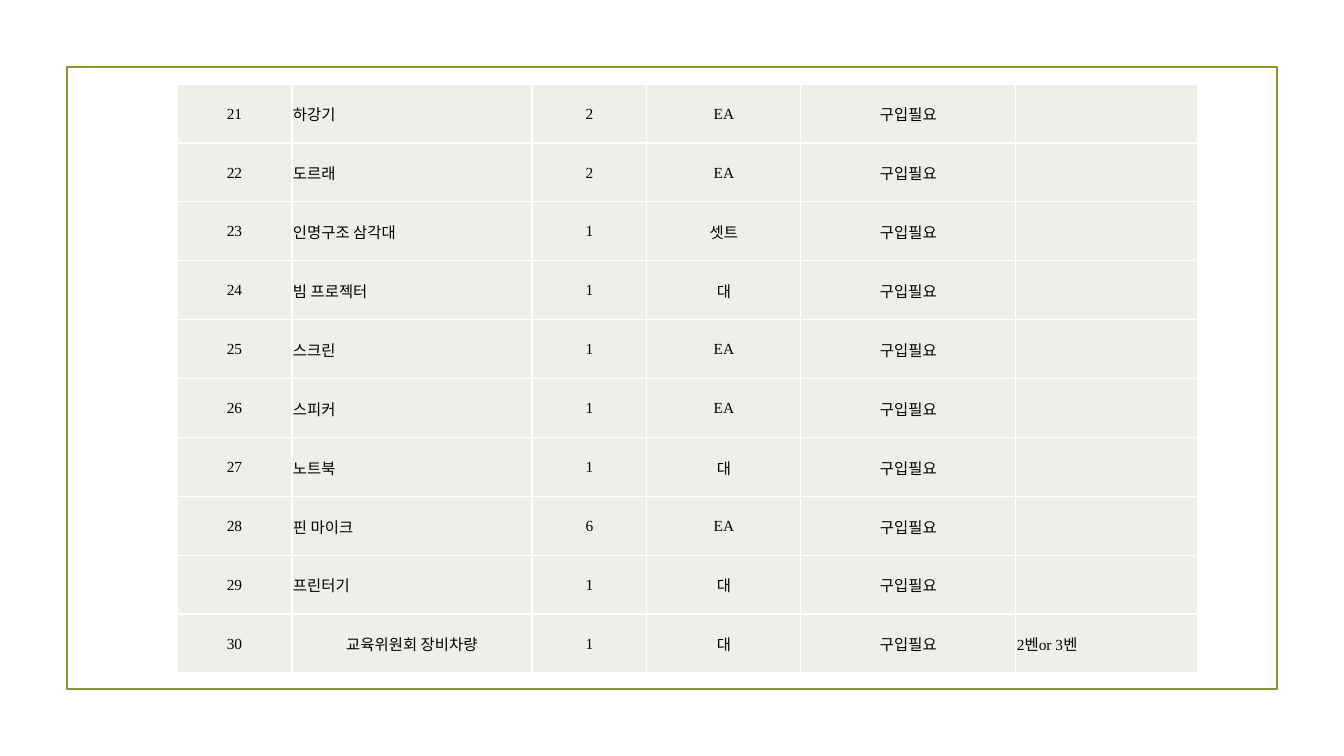
import dataclasses
from typing import Any

import lxml.etree
import pptx
import pptx.dml.color
import pptx.enum.shapes
import pptx.enum.text
import pptx.oxml.ns
import pptx.util

RGB = pptx.dml.color.RGBColor
WHITE = RGB(0xFF, 0xFF, 0xFF)
BLACK = RGB(0x00, 0x00, 0x00)
OLIVE = RGB(0x83, 0x99, 0x2A)
PALE = RGB(0xED, 0xEF, 0xE8)

SCALE = 914400 / 100.8
WIDTHS = (115, 240, 115, 154, 215, 182)
HEIGHT = 589
FIRST = 21
STATUS = "구입필요"

LEFT = pptx.enum.text.PP_ALIGN.LEFT
CENTER = pptx.enum.text.PP_ALIGN.CENTER


@dataclasses.dataclass(frozen=True)
class Item:
    name: str
    count: int
    unit: str
    note: str = ""
    align: Any = LEFT


ITEMS = (
    Item("하강기", 2, "EA"),
    Item("도르래", 2, "EA"),
    Item("인명구조 삼각대", 1, "셋트"),
    Item("빔 프로젝터", 1, "대"),
    Item("스크린", 1, "EA"),
    Item("스피커", 1, "EA"),
    Item("노트북", 1, "대"),
    Item("핀 마이크", 6, "EA"),
    Item("프린터기", 1, "대"),
    Item("교육위원회 장비차량", 1, "대", "2벤or 3벤", CENTER),
)


def px(size: int) -> int:
    return round(size * SCALE)


CELL = {
    "margin_left": px(1),
    "margin_right": px(1),
    "margin_top": px(1),
    "margin_bottom": 0,
    "vertical_anchor": pptx.enum.text.MSO_ANCHOR.MIDDLE,
}
FONT = {"name": "Times New Roman", "size": pptx.util.Pt(11)}
PLAIN = {"first_row": False, "horz_banding": False}


def apply(target: Any, format: dict[str, Any]) -> None:
    for key, value in format.items():
        setattr(target, key, value)


def border(cell: Any) -> None:
    qn = pptx.oxml.ns.qn
    props = cell._tc.get_or_add_tcPr()
    for side in ("lnL", "lnR", "lnT", "lnB"):
        line = lxml.etree.SubElement(
            props, qn(f"a:{side}"), w=str(pptx.util.Pt(1)))
        fill = lxml.etree.SubElement(line, qn("a:solidFill"))
        lxml.etree.SubElement(fill, qn("a:srgbClr"), val=str(WHITE))


def write(cell: Any, text: str, align: Any) -> None:
    border(cell)
    cell.fill.solid()
    cell.fill.fore_color.rgb = PALE
    apply(cell, CELL)
    para = cell.text_frame.paragraphs[0]
    para.alignment = align
    if text:
        run = para.add_run()
        run.text = text
        apply(run.font, FONT)
        run.font.color.rgb = BLACK


def frame(slide: Any) -> None:
    box = slide.shapes.add_shape(
        pptx.enum.shapes.MSO_SHAPE.RECTANGLE,
        px(67), px(67), px(1210), px(622))
    box.shadow.inherit = False
    box.fill.background()
    box.line.color.rgb = OLIVE
    box.line.width = pptx.util.Pt(1.25)


def grid(slide: Any) -> None:
    table = slide.shapes.add_table(
        len(ITEMS), len(WIDTHS),
        px(177), px(84), px(sum(WIDTHS)), px(HEIGHT)).table
    apply(table, PLAIN)
    for column, width in zip(table.columns, WIDTHS):
        column.width = px(width)
    for index, (row, item) in enumerate(zip(table.rows, ITEMS)):
        row.height = px(HEIGHT) // len(ITEMS)
        texts = (str(FIRST + index), item.name, str(item.count),
                 item.unit, STATUS, item.note)
        aligns = (CENTER, item.align, CENTER, CENTER, CENTER, LEFT)
        for cell, text, align in zip(row.cells, texts, aligns):
            write(cell, text, align)


def main() -> None:
    deck = pptx.Presentation()
    apply(deck, {"slide_width": px(1344), "slide_height": px(756)})
    slide = deck.slides.add_slide(deck.slide_layouts[6])
    frame(slide)
    grid(slide)
    deck.save("out.pptx")


if __name__ == "__main__":
    main()
